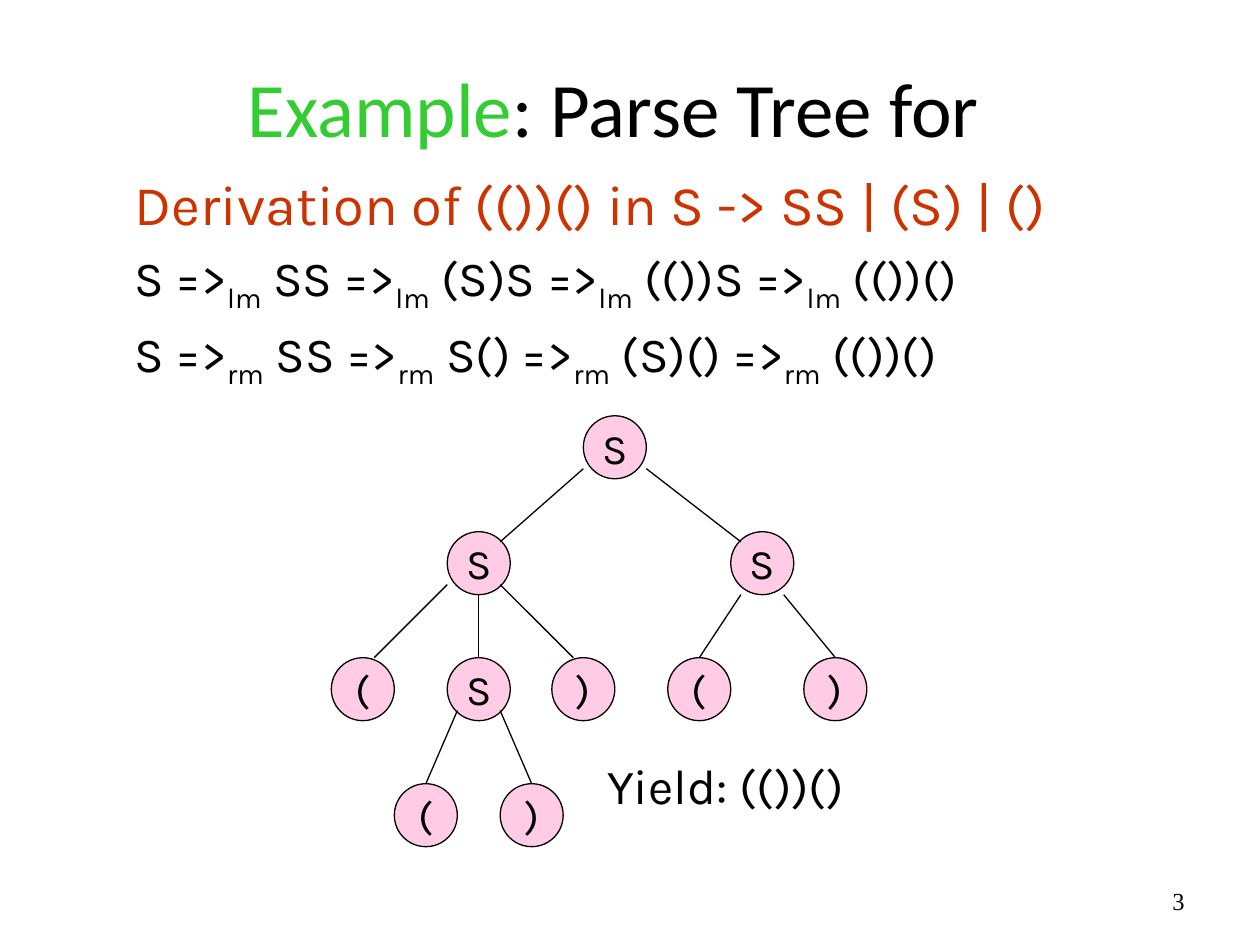
from dataclasses import dataclass

from lxml.etree import SubElement
from pptx import Presentation
from pptx.dml.color import RGBColor
from pptx.enum.shapes import MSO_CONNECTOR, MSO_SHAPE
from pptx.enum.text import MSO_ANCHOR, MSO_AUTO_SIZE, PP_ALIGN
from pptx.oxml.ns import qn
from pptx.util import Inches, Pt


@dataclass(frozen=True)
class Theme:
    ink: RGBColor = RGBColor(0x00, 0x00, 0x00)
    accent: RGBColor = RGBColor(0x33, 0xCC, 0x33)
    grammar: RGBColor = RGBColor(0xCC, 0x33, 0x00)
    node: RGBColor = RGBColor(0xFF, 0x99, 0xCC)
    node_alpha: str = "50000"
    title_font: str = "Calibri"
    body_font: str = "Karla"
    number_font: str = "Times New Roman"
    title_size: int = 44
    grammar_size: int = 32
    body_size: int = 28
    node_size: int = 24
    number_size: int = 14
    line_width: float = 0.75
    paragraph_gap: float = 0.2


THEME = Theme()
NODE_SIZE = 0.5
TREE_LEVELS = [
    (3.3, [("S", 4.63)]),
    (4.22, [("S", 3.55), ("S", 5.8)]),
    (5.22, [("(", 2.63), ("S", 3.55), (")", 4.38), ("(", 5.3), (")", 6.38)]),
    (6.22, [("(", 3.13), (")", 3.97)]),
]
BRANCHES = [
    (3.72, 4.3, [(4.63, 3.97), (5.13, 5.88)]),
    (4.64, 5.22, [(3.55, 2.97), (3.97, 4.55)]),
    (4.72, 5.22, [(3.8, 3.8), (5.88, 5.55), (6.22, 6.63)]),
    (5.64, 6.22, [(3.63, 3.38), (3.97, 4.22)]),
]
DERIVATIONS = [
    ("lm", ["S", "SS", "(S)S", "(())S", "(())()"]),
    ("rm", ["S", "SS", "S()", "(S)()", "(())()"]),
]


def add_run(paragraph, text, size, font=THEME.body_font, color=THEME.ink):
    run = paragraph.add_run()
    run.text = text
    run.font.size = Pt(size)
    run.font.name = font
    run.font.color.rgb = color
    return run


def add_subscript(paragraph, text):
    run = add_run(paragraph, text, THEME.body_size)
    run.font._element.set("baseline", "-25000")


def add_text_frame(slide, left, top, width, height, anchor=MSO_ANCHOR.MIDDLE):
    box = slide.shapes.add_textbox(
        Inches(left), Inches(top), Inches(width), Inches(height)
    )
    frame = box.text_frame
    frame.word_wrap = True
    frame.vertical_anchor = anchor
    return frame


def add_growing_frame(slide, left, top, width, height):
    frame = add_text_frame(slide, left, top, width, height, MSO_ANCHOR.TOP)
    frame.word_wrap = False
    frame.auto_size = MSO_AUTO_SIZE.SHAPE_TO_FIT_TEXT
    return frame


def add_title(slide):
    paragraph = add_text_frame(slide, 0.62, 0.31, 8.5, 1.08).paragraphs[0]
    paragraph.alignment = PP_ALIGN.CENTER
    add_run(paragraph, "Example", THEME.title_size, THEME.title_font, THEME.accent)
    add_run(paragraph, ": Parse Tree for", THEME.title_size, THEME.title_font)


def add_derivation(paragraph, mark, forms):
    paragraph.space_before = Pt(THEME.body_size * THEME.paragraph_gap)
    add_run(paragraph, f"{forms[0]} =>", THEME.body_size)
    for form in forms[1:-1]:
        add_subscript(paragraph, mark)
        add_run(paragraph, f" {form} =>", THEME.body_size)
    add_subscript(paragraph, mark)
    add_run(paragraph, f" {forms[-1]}", THEME.body_size)


def add_derivations(slide):
    frame = add_growing_frame(slide, 0.97, 1.3, 7.9, 1.77)
    grammar = frame.paragraphs[0]
    grammar.space_before = Pt(THEME.grammar_size * THEME.paragraph_gap)
    add_run(
        grammar,
        "Derivation of (())() in S -> SS | (S) | ()",
        THEME.grammar_size,
        color=THEME.grammar,
    )
    for mark, forms in DERIVATIONS:
        add_derivation(frame.add_paragraph(), mark, forms)


def add_node(tree, symbol, left, top):
    node = tree.shapes.add_shape(
        MSO_SHAPE.OVAL, Inches(left), Inches(top), Inches(NODE_SIZE), Inches(NODE_SIZE)
    )
    node.shadow.inherit = False
    node.fill.solid()
    node.fill.fore_color.rgb = THEME.node
    tint = node._element.spPr.find(qn("a:solidFill"))[0]
    SubElement(tint, qn("a:alpha")).set("val", THEME.node_alpha)
    node.line.color.rgb = THEME.ink
    node.line.width = Pt(THEME.line_width)
    frame = node.text_frame
    frame.word_wrap = False
    frame.vertical_anchor = MSO_ANCHOR.MIDDLE
    paragraph = frame.paragraphs[0]
    paragraph.alignment = PP_ALIGN.CENTER
    add_run(paragraph, symbol, THEME.node_size)


def add_branch(tree, parent_x, parent_y, child_x, child_y):
    branch = tree.shapes.add_connector(
        MSO_CONNECTOR.STRAIGHT,
        Inches(parent_x),
        Inches(parent_y),
        Inches(child_x),
        Inches(child_y),
    )
    branch.line.color.rgb = THEME.ink
    branch.line.width = Pt(THEME.line_width)
    SubElement(branch._element.spPr, qn("a:effectLst"))


def add_parse_tree(slide):
    tree = slide.shapes.add_group_shape()
    for top, nodes in TREE_LEVELS:
        for symbol, left in nodes:
            add_node(tree, symbol, left, top)
    for parent_y, child_y, ends in BRANCHES:
        for parent_x, child_x in ends:
            add_branch(tree, parent_x, parent_y, child_x, child_y)


def add_yield(slide):
    frame = add_growing_frame(slide, 4.72, 5.95, 2.32, 0.57)
    add_run(frame.paragraphs[0], "Yield: (())()", THEME.body_size)


def add_slide_number(slide):
    paragraph = add_text_frame(slide, 7.17, 6.95, 2.33, 0.4).paragraphs[0]
    paragraph.alignment = PP_ALIGN.RIGHT
    add_run(paragraph, "3", THEME.number_size, THEME.number_font)


def main():
    presentation = Presentation()
    presentation.slide_width = Inches(10)
    presentation.slide_height = Inches(7.5)
    slide = presentation.slides.add_slide(presentation.slide_layouts[6])
    add_slide_number(slide)
    add_title(slide)
    add_derivations(slide)
    add_parse_tree(slide)
    add_yield(slide)
    presentation.save("out.pptx")


if __name__ == "__main__":
    main()
